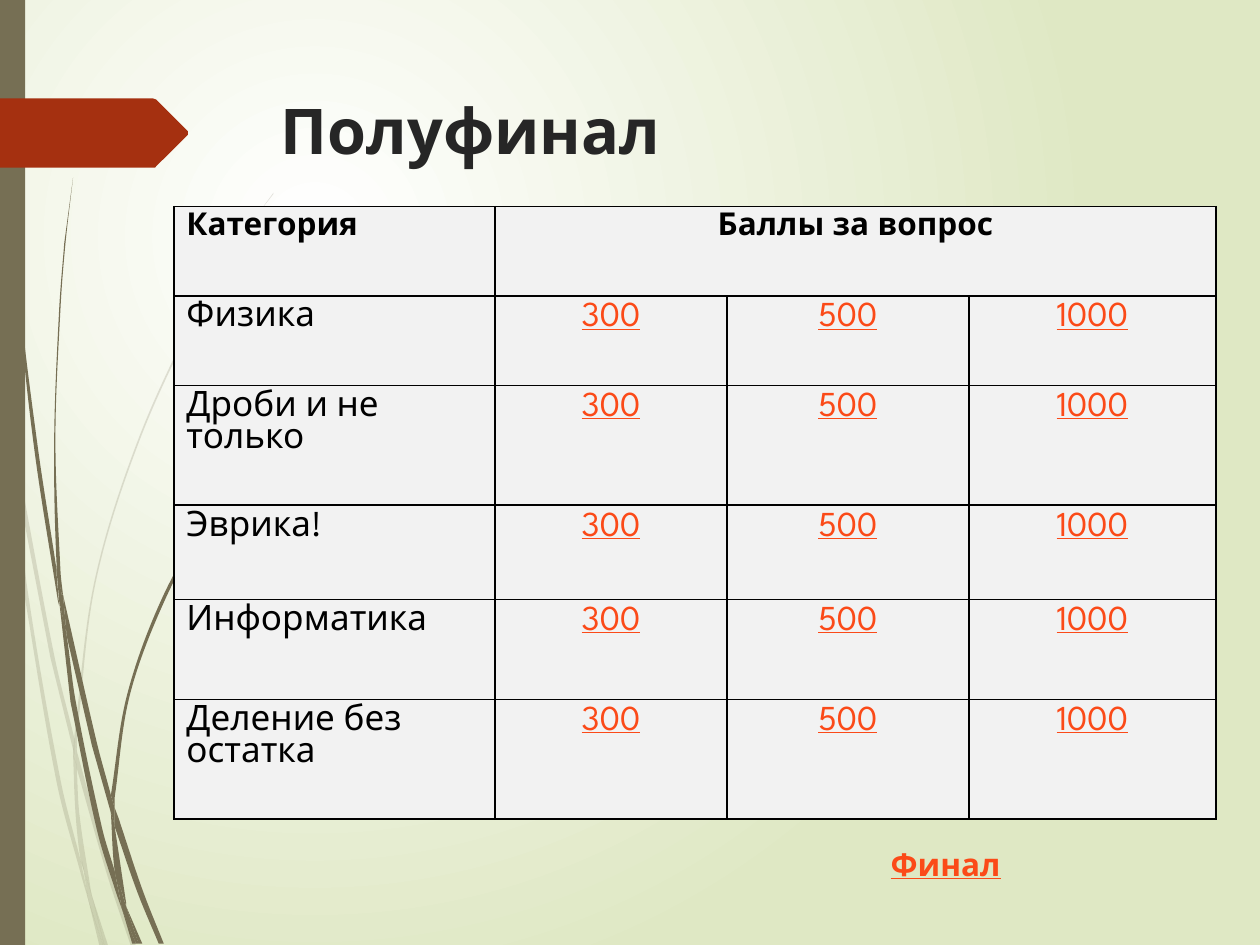
from lxml import etree
from pptx import Presentation
from pptx.dml.color import RGBColor
from pptx.enum.shapes import MSO_SHAPE
from pptx.enum.text import MSO_ANCHOR, PP_ALIGN
from pptx.oxml.ns import qn
from pptx.util import Inches, Pt

RECT = MSO_SHAPE.RECTANGLE
TOP = MSO_ANCHOR.TOP
LEFT, CENTER = PP_ALIGN.LEFT, PP_ALIGN.CENTER

WHITE = RGBColor(0xFF, 0xFF, 0xFF)
PALE_GREEN = RGBColor(0xDF, 0xE8, 0xC4)
OLIVE = RGBColor(0x76, 0x6F, 0x54)
RUST = RGBColor(0xA5, 0x30, 0x10)
TITLE_INK = RGBColor(0x26, 0x26, 0x26)
BLACK = RGBColor(0, 0, 0)
CELL_GREY = RGBColor(0xF2, 0xF2, 0xF2)
LINK_ORANGE = RGBColor(0xFB, 0x4A, 0x18)
FONT = "League Spartan"

# Each blade of grass is a pair of edges, traced around its outline
PALE_BLADES = [
    ([(0.08, 3.5), (0.06, 3.22), (0, 2.82)], [(0, 2.99), (0.07, 3.44), (0.08, 3.5)]),
    ([(0.4, 5.22), (0.59, 5.99)], [(0.59, 5.86), (0.43, 5.2), (0.1, 3.45)], [(0.12, 3.76), (0.4, 5.22)]),
    ([(0.64, 6.07), (0.61, 5.96)], [(0.61, 6.1), (0.85, 6.94), (1.04, 7.51)], [(1.08, 7.51), (0.88, 6.92), (0.64, 6.07)]),
    ([(0.83, 7.51), (0.86, 7.51)], [(0.73, 7.11), (0.83, 7.51)]),
    ([(0.64, 6.83), (0.48, 6.19), (0.22, 4.69), (0.12, 3.76), (0.08, 3.5)],
     [(0.19, 4.7), (0.45, 6.21), (0.64, 6.93), (0.7, 7.14)], [(0.69, 7.07), (0.64, 6.83)]),
    ([(0.58, 5.99), (0.6, 6.46), (0.64, 6.83), (0.67, 6.92), (0.73, 7.11)],
     [(0.72, 7.06), (0.63, 6.46), (0.61, 6.1), (0.61, 6.08), (0.58, 5.99)]),
    ([(0.61, 5.84), (0.76, 4.62), (1.11, 3.49), (1.59, 2.45), (1.87, 1.98), (2.01, 1.75), (2.17, 1.54)],
     [(2.17, 1.53), (2.01, 1.75), (1.86, 1.97), (1.58, 2.44), (1.1, 3.48), (0.75, 4.61), (0.59, 5.84), (0.59, 5.86)],
     [(0.61, 5.96), (0.61, 5.84)]),
    ([(0.7, 7.14), (0.79, 7.51)], [(0.82, 7.51), (0.7, 7.14)]),
    ([(0.61, 6.08), (0.61, 6.1)], [(0.61, 5.96), (0.59, 5.86)], [(0.58, 5.99), (0.61, 6.08)]),
    ([(0.67, 6.92), (0.65, 6.83)], [(0.69, 7.07), (0.7, 7.14), (0.82, 7.51)], [(0.83, 7.51), (0.73, 7.11), (0.67, 6.92)]),
]
DARK_BLADES = [
    ([(0.05, 1.1), (0.14, 2.33), (0.27, 3.55), (0.46, 4.77), (0.47, 4.81)],
     [(0.45, 4.57), (0.45, 4.53), (0.3, 3.55), (0.15, 2.32), (0.06, 1.09), (0.04, 0.48), (0.03, 0)],
     [(0.02, 0), (0.03, 0.48), (0.05, 1.1)]),
    ([(0.73, 5.92), (0.88, 6.45)], [(0.88, 6.33), (0.88, 6.31), (0.77, 5.9), (0.5, 4.72)], [(0.53, 5.05), (0.73, 5.92)]),
    ([(0.94, 6.49), (0.91, 6.41)], [(0.91, 6.56), (1.09, 7.08), (1.26, 7.49)], [(1.3, 7.49), (1.13, 7.06), (0.94, 6.49)]),
    ([(0.91, 6.91), (0.81, 6.57), (0.6, 5.56), (0.53, 5.05), (0.47, 4.77)],
     [(0.56, 5.57), (0.77, 6.59), (0.92, 7.08), (0.97, 7.22)], [(0.96, 7.17), (0.91, 6.91)]),
    ([(0.5, 4.72), (0.48, 4.53), (0.44, 3.49), (0.48, 2.45), (0.52, 1.93), (0.58, 1.41)],
     [(0.51, 1.93), (0.47, 2.45), (0.43, 3.49), (0.45, 4.49), (0.49, 4.72)]),
    ([(1.1, 7.49), (1.13, 7.49)], [(1, 7.19), (1.1, 7.49)]),
    ([(0.47, 4.77), (0.53, 5.05)], [(0.5, 4.72), (0.49, 4.72)], [(0.45, 4.49), (0.45, 4.53), (0.47, 4.77)]),
    ([(0.91, 6.33), (1.03, 5.52), (1.31, 4.76), (1.69, 4.06), (1.91, 3.74), (2.03, 3.59), (2.16, 3.44)],
     [(2.15, 3.44), (2.03, 3.58), (1.91, 3.73), (1.68, 4.05), (1.29, 4.74), (1.01, 5.51), (0.88, 6.31)],
     [(0.91, 6.41), (0.91, 6.33)]),
    ([(0.97, 7.22), (1.05, 7.49)], [(1.08, 7.49), (0.97, 7.22)]),
    ([(0.88, 6.45), (0.91, 6.91), (0.96, 7.06), (1, 7.19)], [(1, 7.16), (0.91, 6.56), (0.9, 6.51), (0.88, 6.45)]),
    ([(0.88, 6.45), (0.9, 6.51), (0.91, 6.56)], [(0.91, 6.41), (0.88, 6.31)], [(0.88, 6.33), (0.88, 6.45)]),
    ([(0.96, 7.06), (0.91, 6.91)], [(0.96, 7.17), (0.97, 7.22), (1.08, 7.49)], [(1.1, 7.49), (1, 7.19), (0.96, 7.06)]),
]
ARROW = [[(1.49, 1.07), (1.24, 1.32)], [(1.23, 1.33), (1.21, 1.33)], [(1.11, 1.33), (0, 1.33)],
         [(0, 0.78), (1.11, 0.78)], [(1.21, 0.78), (1.24, 0.79)], [(1.49, 1.04), (1.49, 1.07)]]

CATEGORIES = ["Физика", "Дроби и не только", "Эврика!", "Информатика", "Деление без остатка"]
POINTS = ["300", "500", "1000"]
COLUMN_WIDTHS = [2.55, 1.84, 1.92, 1.96]
ROW_HEIGHTS = [0.71, 0.71, 0.95, 0.75, 0.79, 0.95]


def paint(shape, color, alpha=100):
    shape.shadow.inherit = False
    shape.fill.solid()
    shape.fill.fore_color.rgb = color
    shape.line.fill.background()
    if alpha < 100:
        srgb = shape._element.spPr.find(".//" + qn("a:srgbClr"))
        etree.SubElement(srgb, qn("a:alpha")).set("val", str(alpha * 1000))


def bend(segment, before, start, end, after):
    """Turn a straight segment into a cubic one, tangent to its neighbours."""
    segment.tag = qn("a:cubicBezTo")
    reach = ((end[0] - start[0]) ** 2 + (end[1] - start[1]) ** 2) ** 0.5 / 3
    controls = []
    for corner, a, b, sign in ((start, before, end, 1), (end, start, after, -1)):
        span = max(((b[0] - a[0]) ** 2 + (b[1] - a[1]) ** 2) ** 0.5, 0.01)
        controls.append([corner[i] + sign * reach * (b[i] - a[i]) / span for i in (0, 1)])
    target = segment[0]
    for control in controls:
        x, y = (int(target.get(axis)) + Inches(control[i] - end[i]) for i, axis in enumerate("xy"))
        target.addprevious(etree.Element(qn("a:pt"), x=str(x), y=str(y)))


def add_outline(shapes, edges, color, alpha=100):
    first, *rest = [(Inches(x), Inches(y)) for edge in edges for x, y in edge]
    builder = shapes.build_freeform(*first)
    builder.add_line_segments(rest, close=True)
    outline = builder.convert_to_shape()
    segments = iter(outline._element.findall(".//" + qn("a:lnTo")))
    for edge in edges:
        padded = [edge[0], *edge, edge[-1]]
        if edge is not edges[0]:
            next(segments)  # the join between two edges stays straight
        for corners in zip(padded, padded[1:], padded[2:], padded[3:]):
            segment = next(segments)
            if len(edge) > 2:
                bend(segment, *corners)
    paint(outline, color, alpha)


def add_background(slide):
    fill = slide.background.fill
    fill.gradient()
    for stop, color in zip(fill.gradient_stops, (WHITE, PALE_GREEN)):
        stop.color.rgb = color
    gradient = slide.background._cSld.find(".//" + qn("a:gradFill"))
    gradient.remove(gradient.find(qn("a:lin")))
    radial = etree.Element(qn("a:path"), path="circle")
    etree.SubElement(radial, qn("a:fillToRect"), l="50000", t="50000", r="100000", b="100000")
    gradient.find(qn("a:gsLst")).addnext(radial)


def add_decoration(slide):
    for blades, alpha in ((PALE_BLADES, 20), (DARK_BLADES, 100)):
        grass = slide.shapes.add_group_shape()
        for edges in blades:
            add_outline(grass.shapes, edges, OLIVE, alpha)
    paint(slide.shapes.add_shape(RECT, 0, 0, Inches(0.2), Inches(7.5)), OLIVE)
    add_outline(slide.shapes, ARROW, RUST)


def style(paragraph, size, color, bold=False, underline=False, align=LEFT):
    paragraph.alignment = align
    font = paragraph.font
    font.name, font.size, font.bold, font.underline = FONT, Pt(size), bold, underline
    font.color.rgb = color


def add_label(slide, text, left, top, width, height, **look):
    box = slide.shapes.add_textbox(Inches(left), Inches(top), Inches(width), Inches(height))
    frame = box.text_frame
    frame.word_wrap, frame.vertical_anchor, frame.text = True, TOP, text
    style(frame.paragraphs[0], **look)


def set_borders(cell):
    for position, side in enumerate(("a:lnL", "a:lnR", "a:lnT", "a:lnB")):
        line = etree.Element(qn(side), w=str(Pt(1)))
        solid = etree.SubElement(line, qn("a:solidFill"))
        etree.SubElement(solid, qn("a:srgbClr"), val=str(BLACK))
        cell._tc.get_or_add_tcPr().insert(position, line)


def add_score_table(slide, left, top):
    table = slide.shapes.add_table(
        len(ROW_HEIGHTS), len(COLUMN_WIDTHS), Inches(left), Inches(top),
        Inches(sum(COLUMN_WIDTHS)), Inches(sum(ROW_HEIGHTS))).table
    table.first_row = table.horz_banding = False
    for column, width in zip(table.columns, COLUMN_WIDTHS):
        column.width = Inches(width)
    for row, height in zip(table.rows, ROW_HEIGHTS):
        row.height = Inches(height)
    table.cell(0, 1).merge(table.cell(0, 3))
    rows = [["Категория", "Баллы за вопрос", "", ""]] + [[name, *POINTS] for name in CATEGORIES]
    for r, texts in enumerate(rows):
        for c, text in enumerate(texts):
            cell = table.cell(r, c)
            cell.fill.solid()
            cell.fill.fore_color.rgb = CELL_GREY
            set_borders(cell)
            cell.text = text
            is_header, is_score = r == 0, r > 0 and c > 0
            style(cell.text_frame.paragraphs[0], 18 if is_header else 20,
                  LINK_ORANGE if is_score else BLACK, is_header, is_score, CENTER if c else LEFT)


prs = Presentation()
prs.slide_width, prs.slide_height = Inches(10), Inches(7.5)
slide = prs.slides.add_slide(prs.slide_layouts[6])
add_background(slide)
add_decoration(slide)
add_label(slide, "Полуфинал", 2.13, 0.68, 7.21, 1.4, size=36, color=TITLE_INK, bold=True)
add_score_table(slide, 1.38, 1.64)
add_label(slide, "Финал", 6.97, 6.66, 1.42, 0.4, size=18, color=LINK_ORANGE, bold=True, underline=True)
prs.save("out.pptx")
